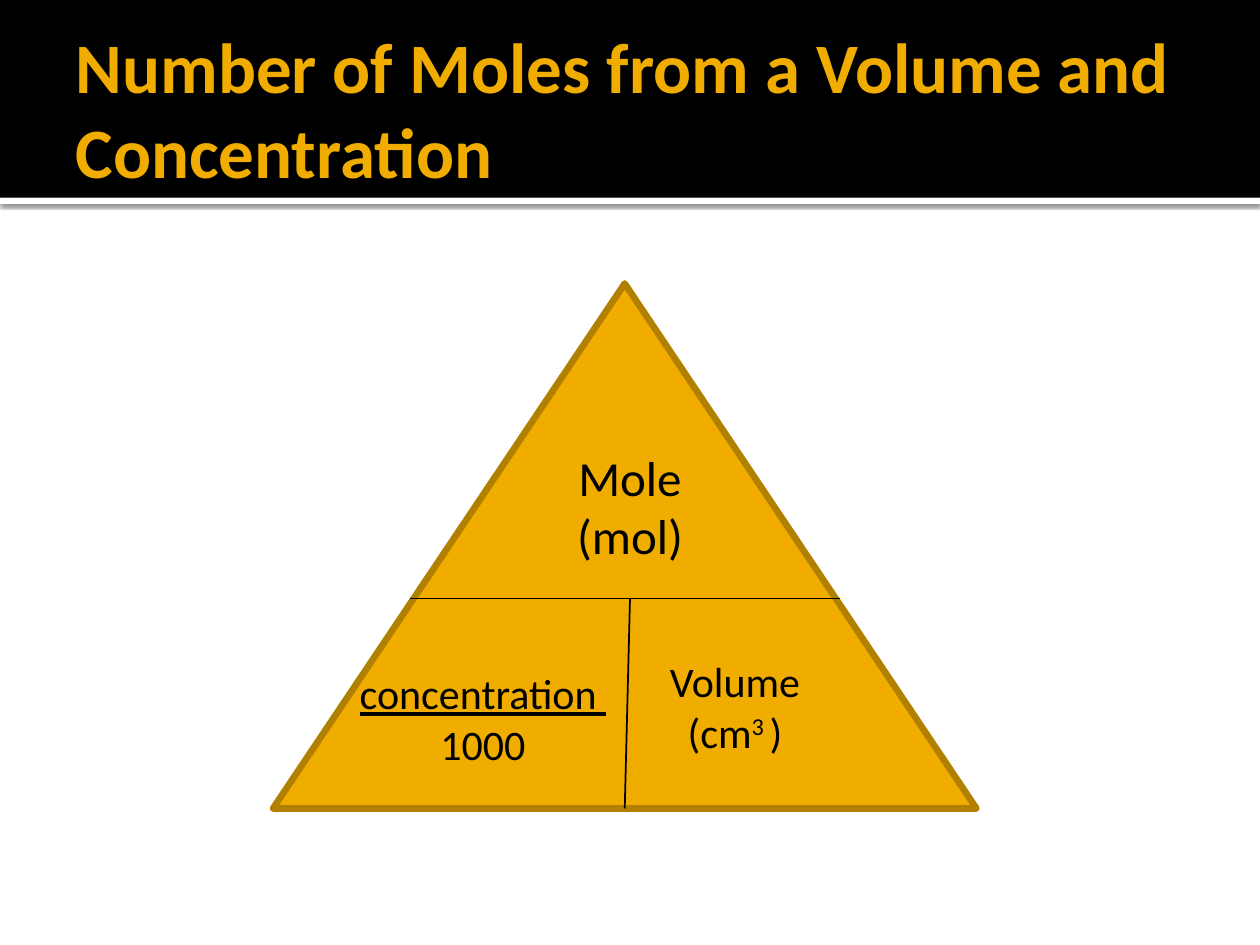
from dataclasses import dataclass

from lxml import etree
from pptx import Presentation
from pptx import util as u
from pptx.dml import color
from pptx.enum import shapes, text
from pptx.oxml import ns

Pt = u.Pt
FONT = "Calibri"
BLACK, WHITE, GOLD, DARK_GOLD = "000000", "FFFFFF", "F0AD00", "B28000"


@dataclass
class Box:
    left: float
    top: float
    width: float
    height: float


@dataclass
class Run:
    words: str
    underline: bool = False
    superscript: bool = False


@dataclass
class Label:
    box: Box
    size: float
    paragraphs: list[list[Run]]


@dataclass
class Divider:
    start: tuple[float, float]
    end: tuple[float, float]


HEADER = Box(0, 0, 720, 113)
HEADER_EDGE = Box(0, 113, 720, 3.6)
TITLE = Box(36, 12.24, 648, 98.64)
TRIANGLE = Box(156, 162, 402, 300)
SPLIT = 342

DIVIDERS = [
    Divider((234, SPLIT), (480, SPLIT)),
    Divider((360, SPLIT), (357, 462)),
]
LABELS = [
    Label(Box(306, 252, 108, 75), 28, [[Run("Mole (mol)")]]),
    Label(Box(192, 378, 168, 66), 24,
          [[Run("concentration ", underline=True)], [Run("1000")]]),
    Label(Box(354, 371.3, 132, 66), 24,
          [[Run("Volume (cm"), Run("3 ", superscript=True), Run(")")]]),
]


def rgb(value: str) -> color.RGBColor:
    return color.RGBColor.from_string(value)


def set_attributes(target, values: dict) -> None:
    for name, value in values.items():
        setattr(target, name, value)


def lengths(box: Box) -> list:
    return [Pt(value) for value in (box.left, box.top, box.width, box.height)]


def format_font(font, size: float, hex_color: str, **extra) -> None:
    set_attributes(font, {"name": FONT, "size": Pt(size), **extra})
    font.color.rgb = rgb(hex_color)


def add_filled(slide, kind, box: Box, fill: str):
    shape = slide.shapes.add_shape(kind, *lengths(box))
    shape.shadow.inherit = False
    shape.fill.solid()
    shape.fill.fore_color.rgb = rgb(fill)
    shape.line.fill.background()
    return shape


def add_soft_shadow(shape) -> None:
    effects = shape._element.spPr.find(ns.qn("a:effectLst"))
    shadow = etree.SubElement(
        effects, ns.qn("a:outerShdw"), blurRad=str(Pt(2.5)), dist=str(Pt(0.8)),
        dir="5400000", algn="tl", rotWithShape="0")
    black = etree.SubElement(shadow, ns.qn("a:srgbClr"), val=BLACK)
    etree.SubElement(black, ns.qn("a:alpha"), val="60000")


def add_header(slide) -> None:
    """Draw the bar and its edge behind the title, then fill in the title."""
    rectangle = shapes.MSO_SHAPE.RECTANGLE
    edge = add_filled(slide, rectangle, HEADER_EDGE, WHITE)
    add_soft_shadow(edge)
    bar = add_filled(slide, rectangle, HEADER, BLACK)
    title = slide.shapes.title
    for shape in (edge, bar):
        title._element.addprevious(shape._element)

    names = ("left", "top", "width", "height")
    set_attributes(title, dict(zip(names, lengths(TITLE))))
    frame = title.text_frame
    frame.text = "Number of Moles from a Volume and Concentration"
    set_attributes(frame, {
        "word_wrap": True,
        "auto_size": text.MSO_AUTO_SIZE.NONE,
        "vertical_anchor": text.MSO_ANCHOR.MIDDLE,
        "margin_left": Pt(7.2),
        "margin_right": Pt(3.6),
        "margin_top": Pt(3.6),
        "margin_bottom": Pt(3.6),
    })
    paragraph = frame.paragraphs[0]
    paragraph.alignment = text.PP_ALIGN.LEFT
    format_font(paragraph.runs[0].font, 40.5, GOLD, bold=True)


def add_triangle(slide) -> None:
    triangle = add_filled(
        slide, shapes.MSO_SHAPE.ISOSCELES_TRIANGLE, TRIANGLE, GOLD)
    triangle.line.color.rgb = rgb(DARK_GOLD)
    triangle.line.width = Pt(3.78)
    outline = triangle._element.spPr.find(ns.qn("a:ln"))
    etree.SubElement(outline, ns.qn("a:round"))


def add_divider(slide, divider: Divider) -> None:
    ends = [Pt(value) for value in divider.start + divider.end]
    line = slide.shapes.add_connector(shapes.MSO_CONNECTOR.STRAIGHT, *ends)
    line.line.color.rgb = rgb(BLACK)
    line.line.width = Pt(1)
    etree.SubElement(line._element.spPr, ns.qn("a:effectLst"))


def add_label(slide, label: Label) -> None:
    frame = slide.shapes.add_textbox(*lengths(label.box)).text_frame
    set_attributes(frame, {
        "word_wrap": True,
        "auto_size": text.MSO_AUTO_SIZE.SHAPE_TO_FIT_TEXT,
    })
    for index, runs in enumerate(label.paragraphs):
        paragraph = frame.add_paragraph() if index else frame.paragraphs[0]
        paragraph.alignment = text.PP_ALIGN.CENTER
        for part in runs:
            run = paragraph.add_run()
            run.text = part.words
            format_font(run.font, label.size, BLACK, underline=part.underline)
            if part.superscript:
                run._r.get_or_add_rPr().set("baseline", "30000")


def main() -> None:
    presentation = Presentation()
    set_attributes(presentation,
                   {"slide_width": Pt(720), "slide_height": Pt(540)})
    title_only = presentation.slide_layouts[5]
    slide = presentation.slides.add_slide(title_only)
    add_header(slide)
    add_triangle(slide)
    for divider in DIVIDERS:
        add_divider(slide, divider)
    for label in LABELS:
        add_label(slide, label)
    presentation.save("out.pptx")


if __name__ == "__main__":
    main()
